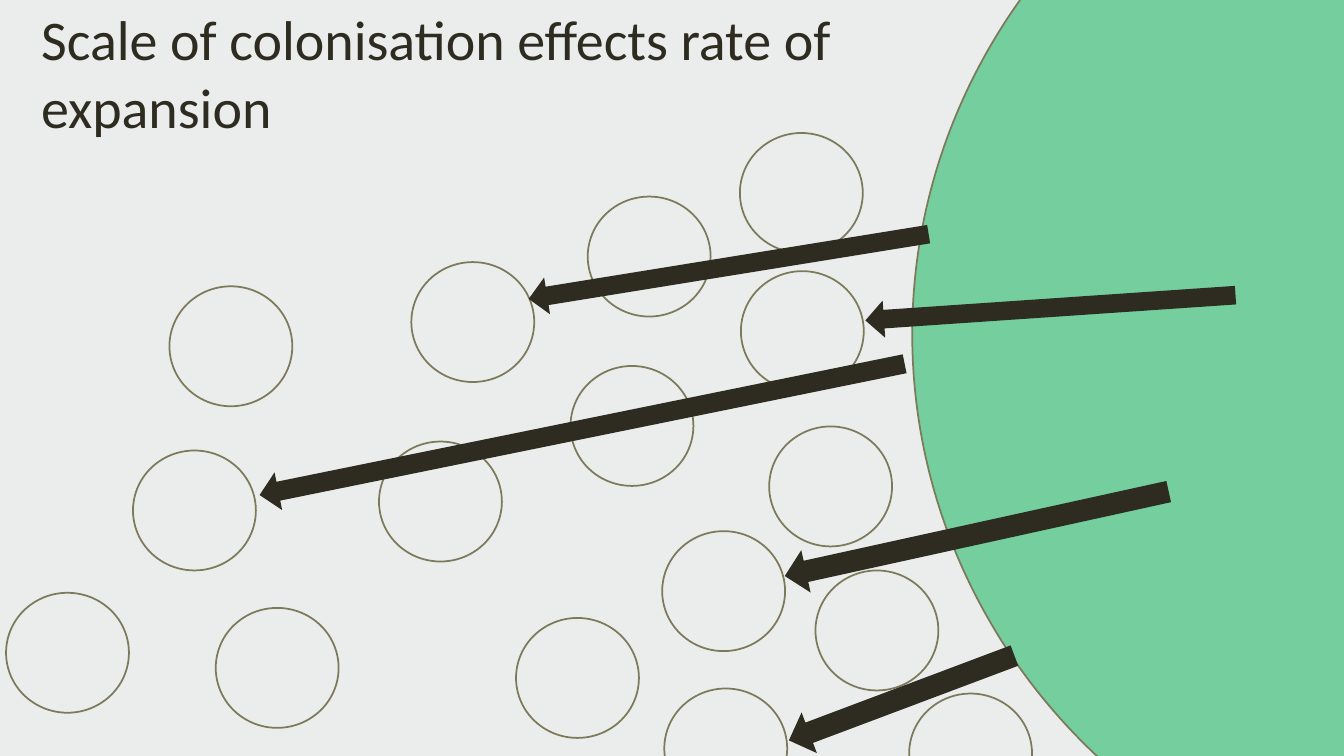
import pptx
import pptx.util
import pptx.dml.color
import pptx.enum.shapes
import pptx.enum.text
import pptx.oxml
import pptx.oxml.ns

Pt = pptx.util.Pt
RGBColor = pptx.dml.color.RGBColor
MSO_SHAPE = pptx.enum.shapes.MSO_SHAPE

TITLE = "Scale of colonisation effects rate of expansion"
TITLE_BOX = (22.3, 0, 670.3, 152.6)
MAINLAND = (651.6, -181.4, 869.8, 840.2)
ISLAND_SIZE = (87.8, 85.7)
ISLANDS = [
    (528.5, 95), (549.4, 304.6), (582.5, 407.5), (649.4, 495.4),
    (419.8, 140.4), (407.5, 261.4), (473, 379.4), (474.5, 491.8),
    (293.8, 187.2), (368.6, 441.4), (121, 204.5), (95, 321.8),
    (154.1, 434.2), (4.3, 423.4), (529.2, 193.7), (270.7, 315.4),
]
ARROWS = [
    ((558, 483.1, 172.1, 31), 339.4),
    ((180.7, 293, 470.2, 27.4), 348.5),
    ((375.8, 177.1, 289.4, 26.6), 350.8),
    ((557.3, 365.8, 280.8, 31), 347.6),
    ((617.8, 206.6, 265, 26.6), 356.1),
]

BACKGROUND = RGBColor(0xEA, 0xED, 0xEB)
GREEN = RGBColor(0x00, 0xB0, 0x50)
OUTLINE = RGBColor(0x7D, 0x7A, 0x5C)
DARK = RGBColor(0x2E, 0x2B, 0x21)


def add_shape(s, kind, box, fill=None, line=None):
    sp = s.shapes.add_shape(kind, *map(Pt, box))
    sp.shadow.inherit = False
    if fill is None:
        sp.fill.background()
    else:
        sp.fill.solid()
        sp.fill.fore_color.rgb = fill
    if line is None:
        sp.line.fill.background()
    else:
        sp.line.color.rgb = line
        sp.line.width = Pt(1.25)
    return sp


def set_opacity(sp, percent):
    color = sp.fill._xPr.find(".//" + pptx.oxml.ns.qn("a:srgbClr"))
    alpha = pptx.oxml.parse_xml(
        f'<a:alpha {pptx.oxml.ns.nsdecls("a")} val="{percent * 1000}"/>')
    color.append(alpha)


def main():
    prs = pptx.Presentation()
    prs.slide_width, prs.slide_height = Pt(960), Pt(540)
    s = prs.slides.add_slide(prs.slide_layouts[6])
    s.background.fill.solid()
    s.background.fill.fore_color.rgb = BACKGROUND

    mainland = add_shape(s, MSO_SHAPE.OVAL, MAINLAND, GREEN, OUTLINE)
    set_opacity(mainland, 50)
    for corner in ISLANDS:
        add_shape(s, MSO_SHAPE.OVAL, corner + ISLAND_SIZE, line=OUTLINE)
    for box, angle in ARROWS:
        add_shape(s, MSO_SHAPE.LEFT_ARROW, box, DARK).rotation = angle

    tf = s.shapes.add_textbox(*map(Pt, TITLE_BOX)).text_frame
    tf.word_wrap = True
    tf.auto_size = pptx.enum.text.MSO_AUTO_SIZE.SHAPE_TO_FIT_TEXT
    tf.text = TITLE
    r = tf.paragraphs[0].runs[0]
    r.font.name = "Calibri"
    r.font.size = Pt(40)
    r.font.color.rgb = DARK

    prs.save("out.pptx")


if __name__ == "__main__":
    main()
